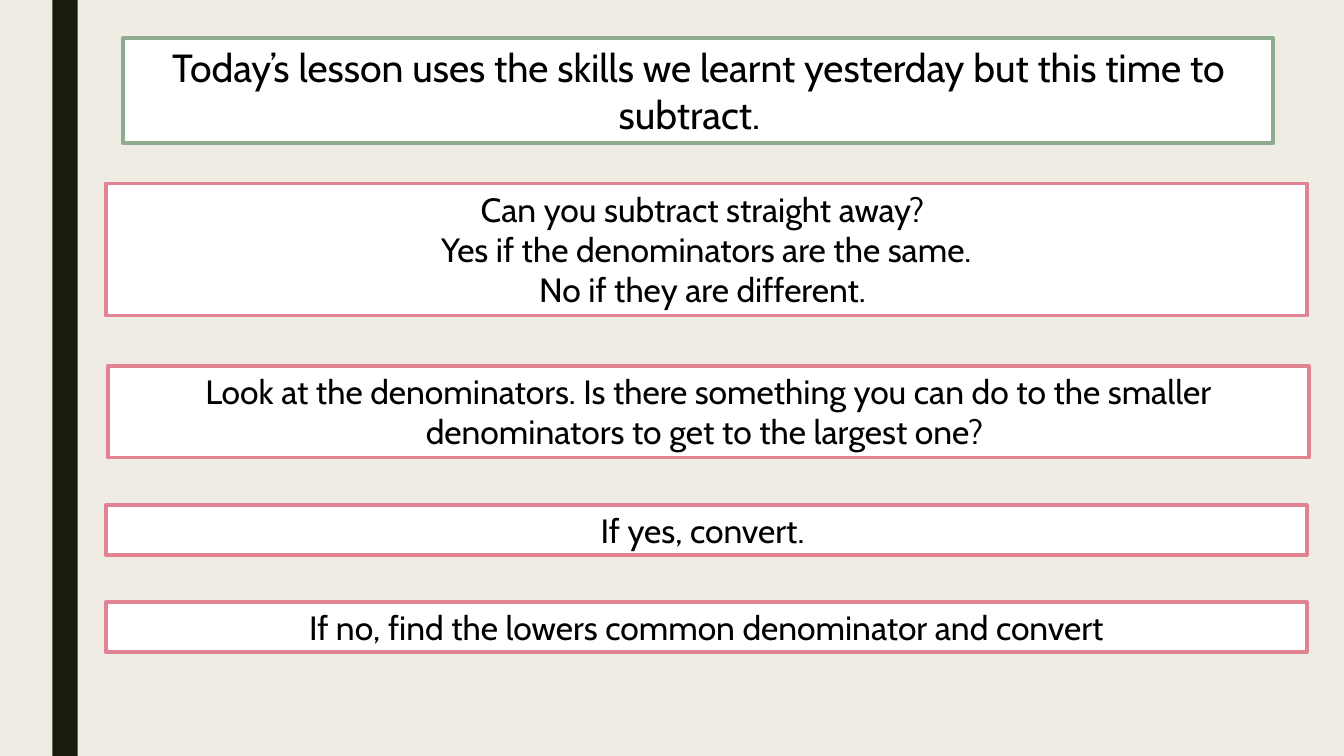
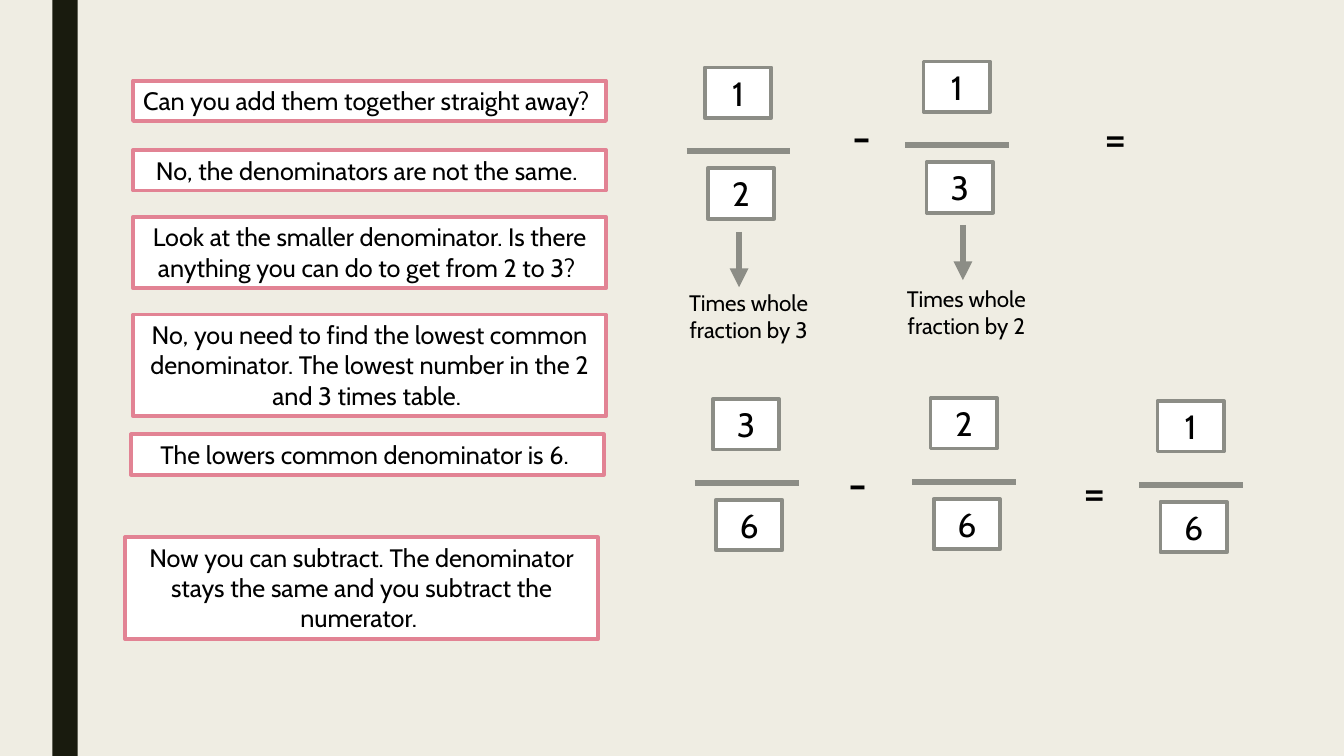
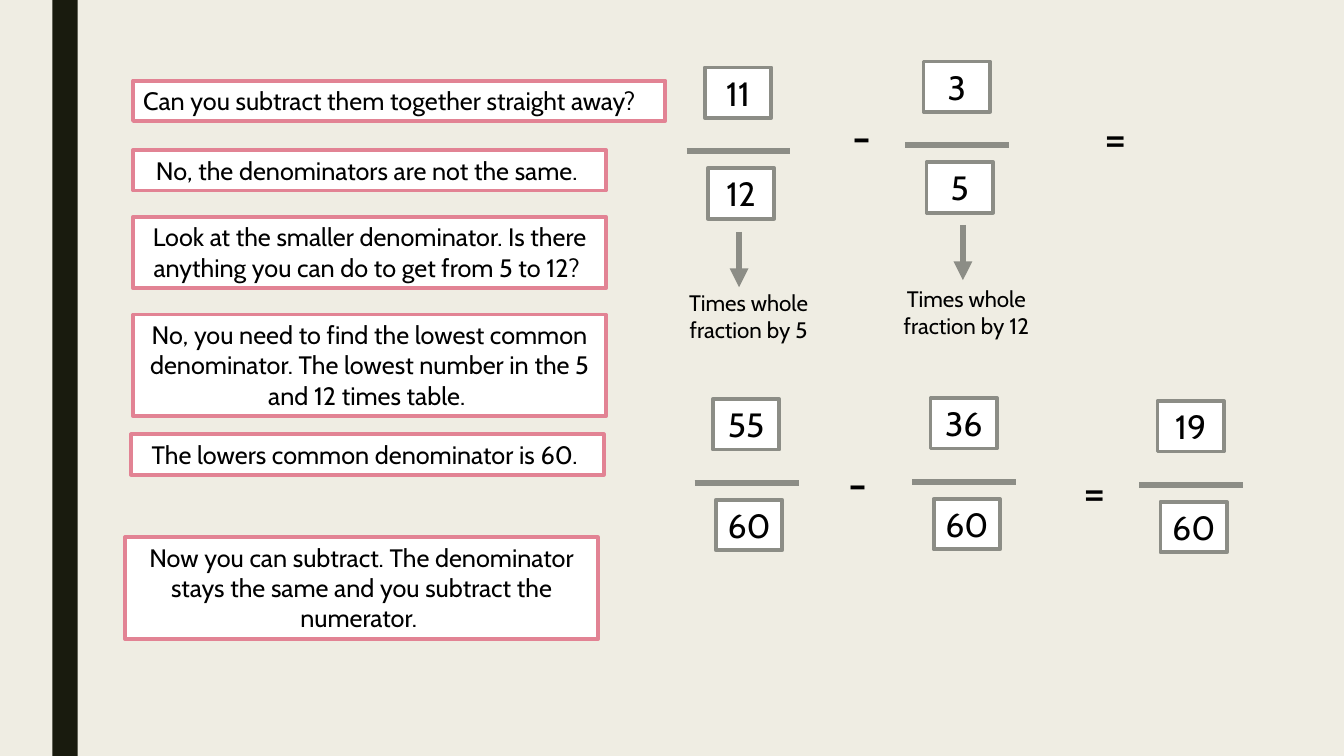
from dataclasses import dataclass
from math import lcm
from typing import Any, NamedTuple

from lxml.etree import SubElement
from pptx import Presentation
from pptx.dml.color import RGBColor
from pptx.enum.shapes import MSO_CONNECTOR as Connector
from pptx.enum.shapes import MSO_SHAPE as Shape
from pptx.enum.text import MSO_ANCHOR as Anchor
from pptx.enum.text import MSO_AUTO_SIZE as AutoSize
from pptx.enum.text import PP_ALIGN as Align
from pptx.oxml.ns import qn
from pptx.util import Inches, Pt

CREAM = RGBColor(0xEF, 0xED, 0xE3)
DARK = RGBColor(0x19, 0x1B, 0x0E)
WHITE = RGBColor(0xFF, 0xFF, 0xFF)
BLACK = RGBColor(0x00, 0x00, 0x00)
GREEN = RGBColor(0x8D, 0xAB, 0x8E)
PINK = RGBColor(0xE2, 0x83, 0x94)
GREY = RGBColor(0x8C, 0x8D, 0x86)

FONT = "Cabin"
TITLE_ONLY, BLANK = 5, 6
BOX_OUTLINE, RULE_WIDTH = 2.75, 4.5
BAND_ID = 20


class Area(NamedTuple):
    left: float
    top: float
    width: float
    height: float

    def lengths(self) -> list[int]:
        return [Inches(value) for value in self]


class Spot(NamedTuple):
    x: float
    y: float


class Fraction(NamedTuple):
    numerator: int
    denominator: int


@dataclass
class Step:
    text: str
    area: Area
    size: int = 18
    wrap: bool = True


@dataclass
class Subtraction:
    first: Fraction
    second: Fraction
    verb: str
    question_width: float

    @property
    def common(self) -> int:
        return lcm(self.first.denominator, self.second.denominator)

    def factor(self, fraction: Fraction) -> int:
        return self.common // fraction.denominator

    def converted(self, fraction: Fraction) -> Fraction:
        return Fraction(fraction.numerator * self.factor(fraction), self.common)

    def steps(self) -> list[Step]:
        low, high = sorted((self.first.denominator, self.second.denominator))
        return [
            Step(f"Can you {self.verb} them together straight away?",
                 Area(1.32, 0.8, self.question_width, 0.4), wrap=False),
            Step("No, the denominators are not the same. ",
                 Area(1.32, 1.49, 4.69, 0.4)),
            Step("Look at the smaller denominator. Is there anything you can do "
                 f"to get from {low} to {high}? ", Area(1.32, 2.15, 4.69, 0.71)),
            Step("No, you need to find the lowest common denominator. The lowest "
                 f"number in the {low} and {high} times table. ",
                 Area(1.32, 3.12, 4.69, 1.01)),
            Step(f"The lowers common denominator is {self.common}. ",
                 Area(1.3, 4.31, 4.69, 0.4)),
            Step("Now you can subtract. The denominator stays the same and you "
                 "subtract the numerator. ", Area(1.24, 5.33, 4.69, 1.01)),
        ]


HEADING = Step("Today’s lesson uses the skills we learnt yesterday but this time "
               "to subtract.  ", Area(1.22, 0.38, 11.41, 1.04), 28)
METHOD = [
    Step("Can you subtract straight away? \n"
         "Yes if the denominators are the same.\n"
         "No if they are different. ", Area(1.05, 1.82, 11.91, 1.31), 24),
    Step("Look at the denominators. Is there something you can do to the smaller "
         "denominators to get to the largest one? ",
         Area(1.07, 3.63, 11.91, 0.91), 24),
    Step("If yes, convert. ", Area(1.05, 5.01, 11.91, 0.5), 24),
    Step("If no, find the lowers common denominator and convert",
         Area(1.05, 5.97, 11.91, 0.5), 24),
]
EXAMPLES = [
    Subtraction(Fraction(1, 2), Fraction(1, 3), "add", 4.69),
    Subtraction(Fraction(11, 12), Fraction(3, 5), "subtract", 5.28),
]
SIGNS = [
    ("-", Spot(8.36, 1.03)),
    ("=", Spot(10.86, 1.04)),
    ("-", Spot(8.32, 4.47)),
    ("=", Spot(10.65, 4.55)),
]


def set_all(target: Any, values: dict[str, Any]) -> None:
    for name, value in values.items():
        setattr(target, name, value)


def write(holder: Any, text: str, size: int, align: Align = Align.CENTER,
          wrap: bool = True) -> None:
    frame = holder.text_frame
    frame.text = text
    set_all(frame, {"word_wrap": wrap, "auto_size": AutoSize.SHAPE_TO_FIT_TEXT,
                    "vertical_anchor": Anchor.TOP})
    for paragraph in frame.paragraphs:
        paragraph.alignment = align
        set_all(paragraph.font, {"name": FONT, "size": Pt(size)})
        paragraph.font.color.rgb = BLACK


def outline(holder: Any, color: RGBColor) -> None:
    holder.fill.solid()
    holder.fill.fore_color.rgb = WHITE
    holder.line.color.rgb = color
    holder.line.width = Pt(BOX_OUTLINE)


def add_text(shapes: Any, text: str, area: Area, size: int,
             align: Align = Align.CENTER, wrap: bool = True) -> Any:
    holder = shapes.add_textbox(*area.lengths())
    write(holder, text, size, align, wrap)
    return holder


def add_step(shapes: Any, step: Step) -> None:
    align = Align.CENTER if step.wrap else Align.LEFT
    outline(add_text(shapes, step.text, step.area, step.size, align, step.wrap), PINK)


def add_rule(shapes: Any, start: Spot, end: Spot, arrow: bool = False) -> None:
    ends = [Inches(value) for value in (*start, *end)]
    rule = shapes.add_connector(Connector.STRAIGHT, *ends)
    rule.line.color.rgb = GREY
    rule.line.width = Pt(RULE_WIDTH)
    if arrow:
        SubElement(rule.line._get_or_add_ln(), qn("a:tailEnd"), type="triangle")
    SubElement(rule.element.spPr, qn("a:effectLst"))


def add_fraction(shapes: Any, fraction: Fraction, at: Spot) -> None:
    """Stack both numbers around a bar; at is the numerator's top left corner."""
    group = shapes.add_group_shape().shapes
    corners = (at, Spot(at.x + 0.03, at.y + 1))
    for number, corner in zip(fraction, corners):
        area = Area(*corner, 0.66, 0.5)
        outline(add_text(group, str(number), area, 24), GREY)
    bar_y = at.y + 0.83
    add_rule(group, Spot(at.x - 0.18, bar_y), Spot(at.x + 0.85, bar_y))


def add_conversion(shapes: Any, factor: int, arrow: Spot, label: Spot) -> None:
    add_rule(shapes, arrow, Spot(arrow.x, arrow.y + 0.55), arrow=True)
    add_text(shapes, f"Times whole fraction by {factor}",
             Area(*label, 1.51, 0.64), 16)


def style_master(deck: Any, slide: Any) -> None:
    """Set the background and move a side band from the slide to the master."""
    master = deck.slide_master
    master.background.fill.solid()
    master.background.fill.fore_color.rgb = CREAM
    band = slide.shapes.add_shape(Shape.RECTANGLE, *Area(0.52, 0, 0.25, 7.5).lengths())
    band.shadow.inherit = False
    band.fill.solid()
    band.fill.fore_color.rgb = DARK
    band.line.fill.background()
    band.element.nvSpPr.cNvPr.id = BAND_ID
    master.shapes.element.append(band.element)


def build_method(deck: Any) -> None:
    slide = deck.slides.add_slide(deck.slide_layouts[TITLE_ONLY])
    style_master(deck, slide)
    title = slide.shapes.title
    set_all(title, dict(zip(Area._fields, HEADING.area.lengths())))
    write(title, HEADING.text, HEADING.size)
    outline(title, GREEN)
    for step in METHOD:
        add_step(slide.shapes, step)


def build_example(deck: Any, example: Subtraction) -> None:
    shapes = deck.slides.add_slide(deck.slide_layouts[BLANK]).shapes
    for step in example.steps():
        add_step(shapes, step)
    for sign, at in SIGNS:
        add_text(shapes, sign, Area(*at, 0.41, 0.64), 32, Align.LEFT)

    first, second = example.first, example.second
    minuend, subtrahend = example.converted(first), example.converted(second)
    answer = Fraction(minuend.numerator - subtrahend.numerator, example.common)
    for fraction, at in [
        (first, Spot(6.99, 0.67)),
        (second, Spot(9.16, 0.61)),
        (minuend, Spot(7.07, 3.96)),
        (subtrahend, Spot(9.23, 3.95)),
        (answer, Spot(11.48, 3.98)),
    ]:
        add_fraction(shapes, fraction, at)
    add_conversion(shapes, example.factor(first), Spot(7.33, 2.3), Spot(6.67, 2.82))
    add_conversion(shapes, example.factor(second), Spot(9.55, 2.23), Spot(8.83, 2.78))


def main() -> None:
    deck = Presentation()
    set_all(deck, {"slide_width": Inches(13.33), "slide_height": Inches(7.5)})
    build_method(deck)
    for example in EXAMPLES:
        build_example(deck, example)
    deck.save("out.pptx")


if __name__ == "__main__":
    main()
